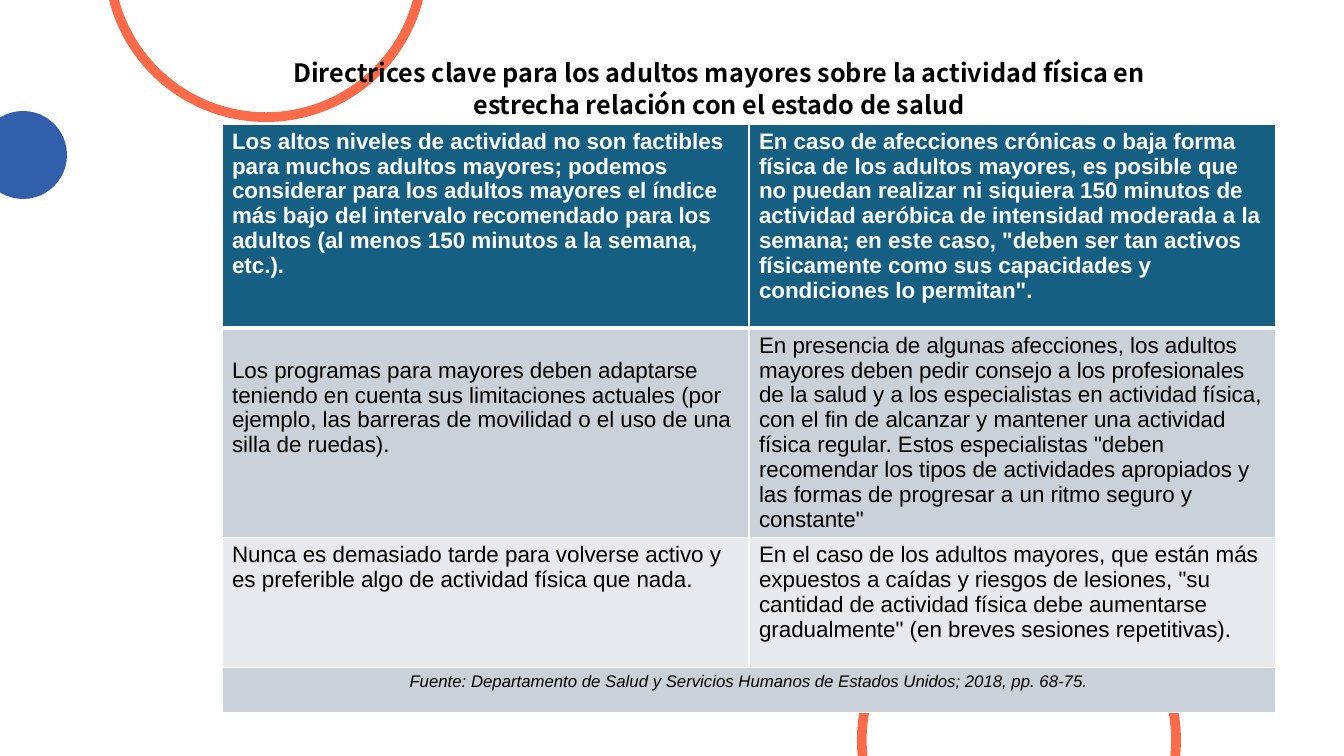
import pptx
import pptx.dml.color
import pptx.enum.shapes
import pptx.enum.text
import pptx.util
from lxml import etree

# Content
TITLE = ("Directrices clave para los adultos mayores sobre la actividad física en "
         "estrecha relación con el estado de salud")
GUIDELINES = [
    ("Los altos niveles de actividad no son factibles para muchos adultos mayores; "
     "podemos considerar para los adultos mayores el índice más bajo del intervalo "
     "recomendado para los adultos (al menos 150 minutos a la semana, etc.).",
     "En caso de afecciones crónicas o baja forma física de los adultos mayores, es "
     "posible que no puedan realizar ni siquiera 150 minutos de actividad aeróbica de "
     "intensidad moderada a la semana; en este caso, \"deben ser tan activos "
     "físicamente como sus capacidades y condiciones lo permitan\"."),
    ("Los programas para mayores deben adaptarse teniendo en cuenta sus limitaciones "
     "actuales (por ejemplo, las barreras de movilidad o el uso de una silla de ruedas).",
     "En presencia de algunas afecciones, los adultos mayores deben pedir consejo a los "
     "profesionales de la salud y a los especialistas en actividad física, con el fin de "
     "alcanzar y mantener una actividad física regular. Estos especialistas \"deben "
     "recomendar los tipos de actividades apropiados y las formas de progresar a un "
     "ritmo seguro y constante\""),
    ("Nunca es demasiado tarde para volverse activo y es preferible algo de actividad "
     "física que nada.",
     "En el caso de los adultos mayores, que están más expuestos a caídas y riesgos de "
     "lesiones, \"su cantidad de actividad física debe aumentarse gradualmente\" (en "
     "breves sesiones repetitivas)."),
    ("Fuente: Departamento de Salud y Servicios Humanos de Estados Unidos; 2018, "
     "pp. 68-75.", ""),
]
ROW_HEIGHTS = [204, 204, 130, 45]
ROW_FILLS = ["156082", "CAD1D8", "E7E9EC", "CAD1D8"]
COLUMN_WIDTH = 527
HEADER, ADAPTED, SOURCE = 0, 1, 3

# Decoration: preset, left, top, size, colour
SHAPES = pptx.enum.shapes.MSO_SHAPE
CIRCLES = [
    (SHAPES.OVAL, -21, 111, 88, "315FAB"),
    (SHAPES.DONUT, 857, 578, 324, "FB6B49"),
    (SHAPES.DONUT, 104, -202, 324, "FB6B49"),
]
RING_THICKNESS = 0.03
CENTER = pptx.enum.text.PP_ALIGN.CENTER


def px(length):
    return pptx.util.Emu(round(length * 914400 / 100.8))


def color(value):
    return pptx.dml.color.RGBColor.from_string(value)


def style(para, name, size, value, bold=False, italic=False):
    for span in para.runs:
        span.font.name = name
        span.font.size = pptx.util.Pt(size)
        span.font.color.rgb = color(value)
        span.font.bold = bold
        span.font.italic = italic


def add_borders(cell, widths):
    properties = cell._tc.get_or_add_tcPr()
    for side, points in widths.items():
        line = etree.SubElement(properties, pptx.oxml.ns.qn(f"a:ln{side}"),
                                w=str(pptx.util.Pt(points)))
        fill = etree.SubElement(line, pptx.oxml.ns.qn("a:solidFill"))
        etree.SubElement(fill, pptx.oxml.ns.qn("a:srgbClr"), val="FFFFFF")


def add_circles(page):
    for preset, left, top, size, value in CIRCLES:
        circle = page.shapes.add_shape(preset, px(left), px(top), px(size), px(size))
        circle.shadow.inherit = False
        circle.fill.solid()
        circle.fill.fore_color.rgb = color(value)
        circle.line.fill.background()
        if preset == SHAPES.DONUT:
            circle.adjustments[0] = RING_THICKNESS


def add_guidelines(page):
    table = page.shapes.add_table(len(GUIDELINES), 2, px(222), px(124),
                                  px(2 * COLUMN_WIDTH), px(sum(ROW_HEIGHTS))).table
    for column in table.columns:
        column.width = px(COLUMN_WIDTH)
    for row, texts in enumerate(GUIDELINES):
        table.rows[row].height = px(ROW_HEIGHTS[row])
        widths = {"L": 1, "R": 1, "T": 3 if row == ADAPTED else 1,
                  "B": 3 if row == HEADER else 1}
        for column, text in enumerate(texts):
            cell = table.cell(row, column)
            add_borders(cell, widths)
            cell.fill.solid()
            cell.fill.fore_color.rgb = color(ROW_FILLS[row])
            cell.text_frame.text = text
            style(cell.text_frame.paragraphs[0], "Arial", 12 if row == SOURCE else 16,
                  "FFFFFF" if row == HEADER else "000000",
                  bold=row == HEADER, italic=row == SOURCE)
    # The adapted-programmes text starts one line lower
    table.cell(ADAPTED, 0).margin_top = px(30)
    source = table.cell(SOURCE, 0)
    source.merge(table.cell(SOURCE, 1))
    source.text_frame.paragraphs[0].alignment = CENTER


def add_title(page):
    box = page.shapes.add_textbox(px(267), px(50), px(904), px(74))
    box.text_frame.word_wrap = True
    box.text_frame.text = TITLE
    para = box.text_frame.paragraphs[0]
    para.alignment = CENTER
    para.line_spacing = 1.07
    style(para, "Noto Sans CJK KR", 18, "000000", bold=True)


def main():
    deck = pptx.Presentation()
    deck.slide_width, deck.slide_height = px(1344), px(756)
    page = deck.slides.add_slide(deck.slide_layouts[6])
    add_circles(page)
    add_guidelines(page)
    add_title(page)
    deck.save("out.pptx")


if __name__ == "__main__":
    main()
